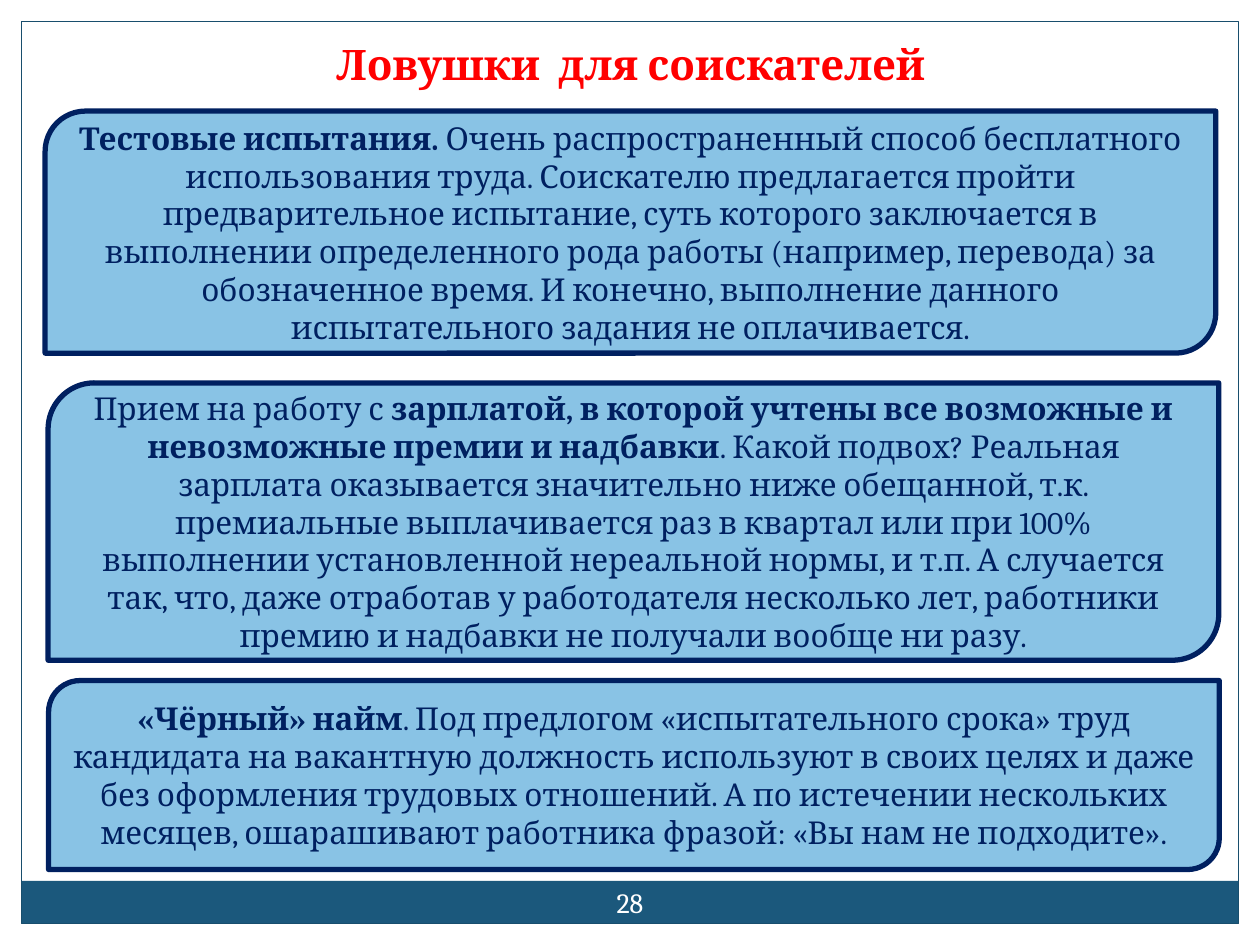
from pptx import Presentation
from pptx import util as u
from pptx.dml.color import RGBColor
from pptx.enum import shapes, text

RED = RGBColor(0xFF, 0x00, 0x00)
NAVY = RGBColor(0x00, 0x20, 0x60)
SKY = RGBColor(0x89, 0xC3, 0xE5)
TEAL = RGBColor(0x1B, 0x58, 0x7C)
DARK_TEAL = RGBColor(0x18, 0x4E, 0x6D)
WHITE = RGBColor(0xFF, 0xFF, 0xFF)

SLIDE_WIDTH, SLIDE_HEIGHT, MARGIN = 25.4, 19.05, 0.43
BAND_HEIGHT = 0.86
CARD_WIDTH = 23.6

TITLE = "Ловушки  для соискателей"
TITLE_FONT = {"name": "Cambria", "size": u.Pt(24), "bold": True}
CARD_FONT = {"name": "Cambria", "size": u.Pt(18)}
NUMBER_FONT = {"name": "Cambria", "size": u.Pt(16)}
CENTRED_FRAME = {"word_wrap": True, "vertical_anchor": text.MSO_ANCHOR.MIDDLE}
NUMBER_FRAME = CENTRED_FRAME | {
    f"margin_{side}": u.Cm(0.13) for side in ("left", "top", "right", "bottom")
}

CARDS = [
    ((0.91, 2.24, CARD_WIDTH, 4.88), [
        ("Тестовые испытания. ", True),
        ("Очень распространенный способ бесплатного использования труда. "
         "Соискателю предлагается пройти предварительное испытание, суть которого "
         "заключается в выполнении определенного рода работы (например, перевода) "
         "за обозначенное время. И конечно, выполнение данного испытательного "
         "задания не оплачивается.", False),
    ]),
    ((0.97, 7.72, CARD_WIDTH, 5.59), [
        ("Прием на работу с ", False),
        ("зарплатой, в которой учтены все возможные и невозможные премии и надбавки",
         True),
        (". Какой подвох? Реальная зарплата оказывается значительно ниже обещанной, "
         "т.к. премиальные выплачивается раз в квартал или при 100% выполнении "
         "установленной нереальной нормы, и т.п. А случается так, что, даже отработав "
         "у работодателя несколько лет, работники премию и надбавки не получали "
         "вообще ни разу.", False),
    ]),
    ((0.98, 13.72, CARD_WIDTH, 3.81), [
        ("«Чёрный» найм", True),
        (". Под предлогом «испытательного срока» труд кандидата на вакантную "
         "должность используют в своих целях и даже без оформления трудовых "
         "отношений. А по истечении нескольких месяцев, ошарашивают работника "
         "фразой: «Вы нам не подходите».", False),
    ]),
]


def apply_format(target, values):
    """Set every attribute named in a dict of format values."""
    for name, value in values.items():
        setattr(target, name, value)


def write_runs(shape, runs, font, color, frame_format):
    """Fill a shape with one centred paragraph of (wording, bold) runs."""
    apply_format(shape.text_frame, frame_format)
    paragraph = shape.text_frame.paragraphs[0]
    paragraph.alignment = text.PP_ALIGN.CENTER
    for wording, bold in runs:
        run = paragraph.add_run()
        run.text = wording
        apply_format(run.font, font | {"bold": bold})
        run.font.color.rgb = color


def add_panel(slide, kind, box, fill=None, line=None, line_width=0.75):
    """Add a flat preset shape with an optional fill and outline."""
    shape = slide.shapes.add_shape(kind, *map(u.Cm, box))
    shape.shadow.inherit = False
    if fill is None:
        shape.fill.background()
    else:
        shape.fill.solid()
        shape.fill.fore_color.rgb = fill
    if line is None:
        shape.line.fill.background()
    else:
        shape.line.color.rgb = line
        shape.line.width = u.Pt(line_width)
    return shape


def add_frame(slide, box):
    """Draw the page outline with the footer band and its slide number."""
    left, top, width, height = box
    band_top = top + height - BAND_HEIGHT
    rectangle = shapes.MSO_SHAPE.RECTANGLE
    add_panel(slide, rectangle, (left, band_top, width, BAND_HEIGHT), fill=TEAL)
    add_panel(slide, rectangle, box, line=DARK_TEAL)
    number_width, number_height = 1.7, 1.22
    number_box = (left + (width - number_width) / 2,
                  band_top + (BAND_HEIGHT - number_height) / 2 + 0.01,
                  number_width, number_height)
    number = slide.shapes.add_textbox(*map(u.Cm, number_box))
    write_runs(number, [("28", False)], NUMBER_FONT, WHITE, NUMBER_FRAME)


def add_title(slide, box):
    """Place and format the title placeholder."""
    title = slide.shapes.title
    left, top, width, height = map(u.Cm, box)
    apply_format(title, {"left": left, "top": top, "width": width, "height": height})
    write_runs(title, [(TITLE, True)], TITLE_FONT, RED,
               {"word_wrap": False, "vertical_anchor": text.MSO_ANCHOR.TOP})


def add_card(slide, box, runs):
    """Add one card with two rounded corners and centred wording."""
    card = add_panel(slide, shapes.MSO_SHAPE.ROUND_2_DIAG_RECTANGLE, box,
                     SKY, NAVY, 3)
    write_runs(card, runs, CARD_FONT, NAVY, CENTRED_FRAME)


def main():
    """Build the slide and save the presentation."""
    presentation = Presentation()
    apply_format(presentation, {"slide_width": u.Cm(SLIDE_WIDTH),
                                "slide_height": u.Cm(SLIDE_HEIGHT)})
    slide = presentation.slides.add_slide(presentation.slide_layouts[5])
    add_frame(slide, (MARGIN, MARGIN, SLIDE_WIDTH - 2 * MARGIN,
                      SLIDE_HEIGHT - 2 * MARGIN))
    add_title(slide, (6.3, 0.64, 12.83, 1.27))
    for box, runs in CARDS:
        add_card(slide, box, runs)
    presentation.save("out.pptx")


if __name__ == "__main__":
    main()
